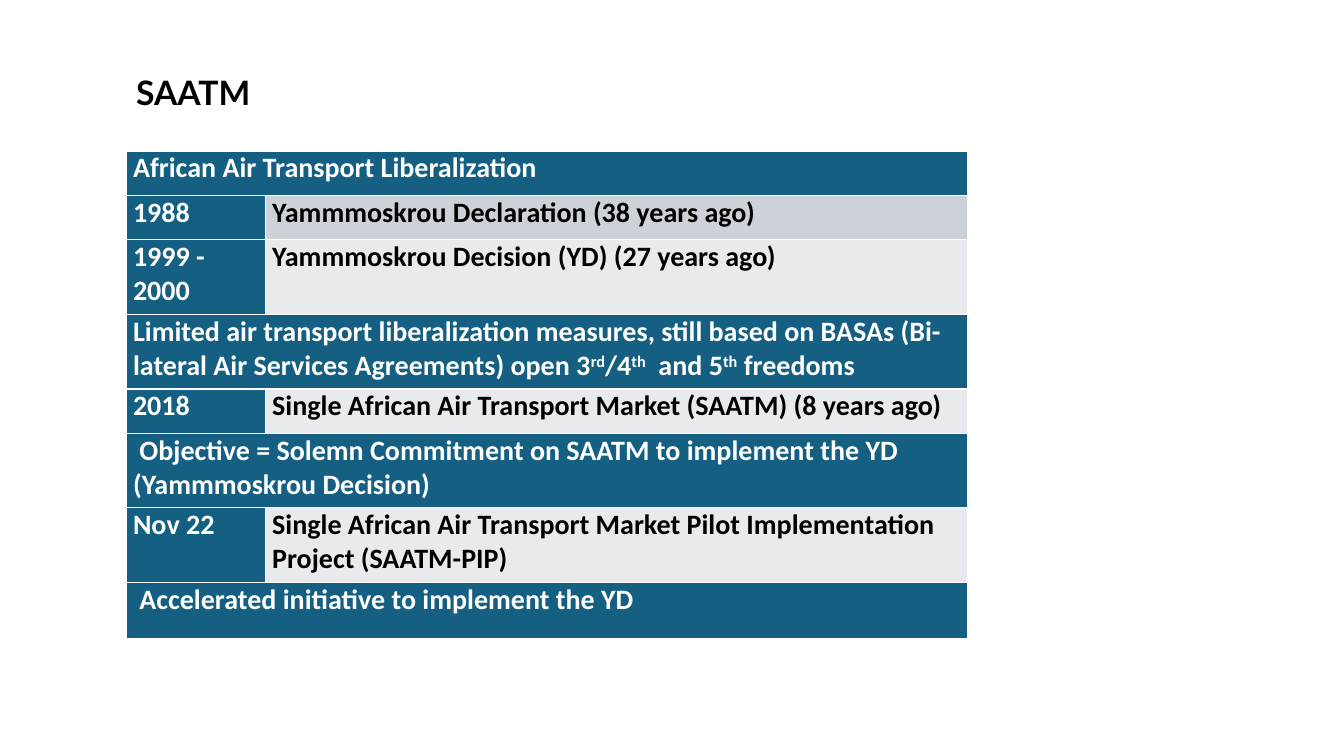
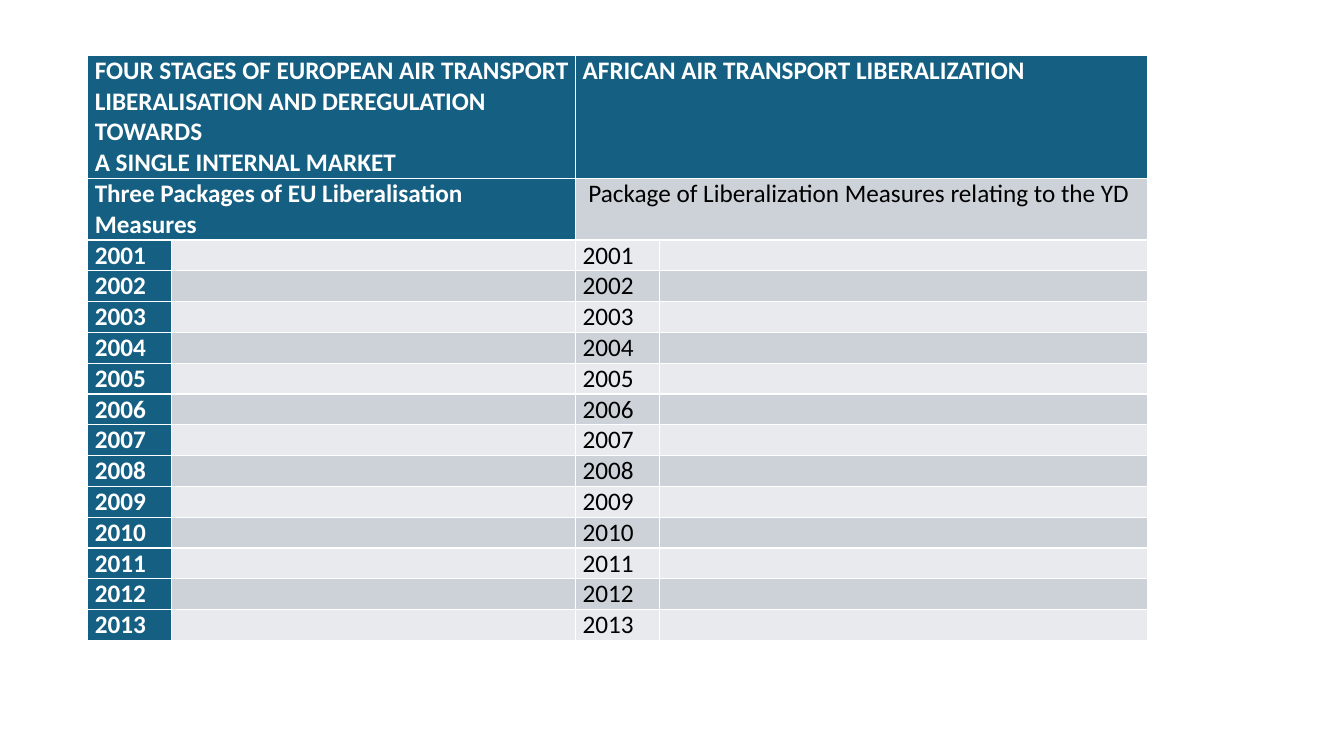
"""Build two slides of tables on African and European air transport liberalization."""
from pptx import Presentation
from pptx import util as u
from pptx.dml.color import RGBColor
from pptx.enum import text

WIDE, HIGH = 13.33, 7.5
DARK, BANDS = "156082", ("E8EAED", "CCD2D8")
WHITE, BLACK = "FFFFFF", "000000"
PAD = {"margin_left": 0.07, "margin_right": 0.07, "margin_top": 0, "margin_bottom": 0}

TITLE = "SAATM"
STEPS = [
    ("African Air Transport Liberalization", None),
    ("1988", "Yammmoskrou Declaration (38 years ago)"),
    ("1999 - 2000", "Yammmoskrou Decision (YD) (27 years ago)"),
    ("Limited air transport liberalization measures, still based on BASAs "
     "(Bi-lateral Air Services Agreements) open 3^rd^/4^th^  and 5^th^ freedoms", None),
    ("2018", "Single African Air Transport Market (SAATM) (8 years ago)"),
    (" Objective = Solemn Commitment on SAATM to implement the YD "
     "(Yammmoskrou Decision)", None),
    ("Nov 22", "Single African Air Transport Market Pilot Implementation Project (SAATM-PIP)"),
    (" Accelerated initiative to implement the YD", None),
]
STAGES = [
    ("FOUR STAGES OF EUROPEAN AIR TRANSPORT LIBERALISATION AND DEREGULATION TOWARDS \n"
     "A SINGLE INTERNAL MARKET", None, "AFRICAN AIR TRANSPORT LIBERALIZATION", None),
    ("Three Packages of EU Liberalisation Measures", None,
     " Package of Liberalization Measures relating to the YD", None),
] + [(str(year), "", str(year), "") for year in range(2001, 2014)]

TABLES = [
    {"title": TITLE, "rows": STEPS, "at": (1.25, 1.5), "cols": (1.38, 6.97),
     "highs": (0.44, 0.44, 0.74, 0.74, 0.44, 0.74, 0.74, 0.56), "size": 20, "bold": True},
    {"title": None, "rows": STAGES, "at": (0.87, 0.55), "cols": (0.83, 4.01, 0.83, 4.84),
     "highs": (1.2, 0.6) + (0.3,) * 13, "size": 18, "bold": False},
]


def color(code):
    """Turn a hex string into a colour."""
    return RGBColor.from_string(code)


def style(font, ink, **form):
    """Set the ink and other values of a font."""
    font.color.rgb = color(ink)
    for key, val in form.items():
        setattr(font, key, val)


def write(para, words, ink, **form):
    """Write words with line breaks and ^raised^ parts."""
    for row, line in enumerate(words.split("\n")):
        if row:
            para.add_line_break()
        for num, part in enumerate(line.split("^")):
            if part:
                run = para.add_run()
                run.text = part
                style(run.font, ink, **form)
                if num % 2:
                    run._r.get_or_add_rPr().set("baseline", "30000")


def add_title(slide, words):
    """Place and format the title."""
    head = slide.shapes.title
    for key, val in zip(("left", "top", "width", "height"), (1.25, 0.66, 6.67, 0.5)):
        setattr(head, key, u.Inches(val))
    head.text_frame.vertical_anchor = text.MSO_ANCHOR.MIDDLE
    para = head.text_frame.paragraphs[0]
    para.alignment = text.PP_ALIGN.LEFT
    write(para, words, BLACK, name="Lato", size=u.Pt(24), bold=True)


def add_grid(slide, plan):
    """Add a table with a dark first row and column, and banded cells."""
    rows, cols, highs = plan["rows"], plan["cols"], plan["highs"]
    box = [u.Inches(val) for val in (*plan["at"], sum(cols), sum(highs))]
    grid = slide.shapes.add_table(len(rows), len(cols), *box).table
    for col, wide in zip(grid.columns, cols):
        col.width = u.Inches(wide)
    for row, high in zip(grid.rows, highs):
        row.height = u.Inches(high)
    for r, row in enumerate(rows):
        for c, words in enumerate(row):
            cell = grid.cell(r, c)
            if words is None:
                grid.cell(r, c - 1).merge(cell)
                continue
            dark = r == 0 or c == 0
            cell.fill.solid()
            cell.fill.fore_color.rgb = color(DARK if dark else BANDS[r % 2])
            for key, val in PAD.items():
                setattr(cell, key, u.Inches(val))
            write(cell.text_frame.paragraphs[0], words, WHITE if dark else BLACK,
                  name="Calibri", size=u.Pt(plan["size"]), bold=dark or plan["bold"])


def main():
    """Build and save the slides."""
    deck = Presentation()
    deck.slide_width, deck.slide_height = u.Inches(WIDE), u.Inches(HIGH)
    for plan in TABLES:
        slide = deck.slides.add_slide(deck.slide_layouts[5 if plan["title"] else 6])
        if plan["title"]:
            add_title(slide, plan["title"])
        add_grid(slide, plan)
    deck.save("out.pptx")


if __name__ == "__main__":
    main()
